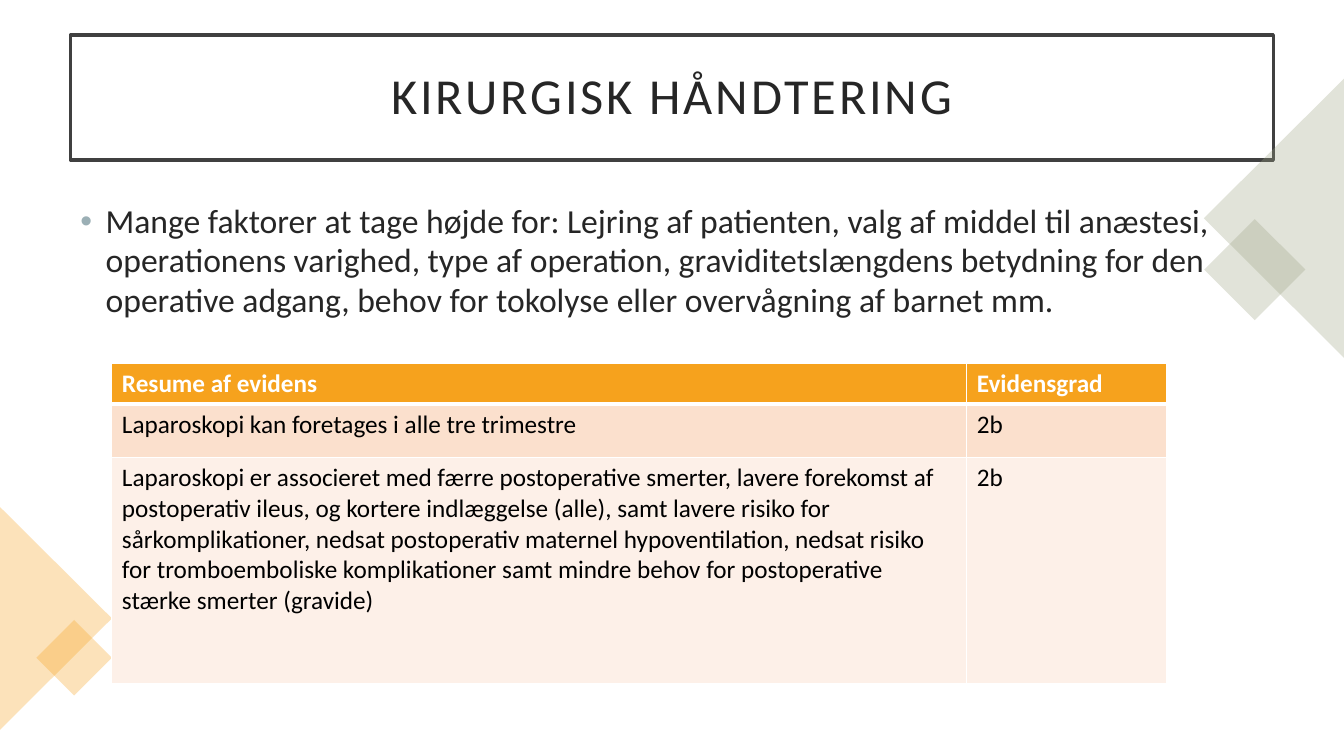
from lxml.etree import SubElement
from pptx import Presentation
from pptx.dml.color import RGBColor
from pptx.enum.shapes import MSO_SHAPE as Shape
from pptx.enum.text import MSO_ANCHOR as Anchor, PP_ALIGN as Align
from pptx.oxml import parse_xml
from pptx.oxml.ns import nsdecls, qn
from pptx.util import Inches, Pt

COLORS = {
    "white": "FFFFFF", "backdrop": "F2F2F2", "frame": "404040", "ink": "262626",
    "black": "000000", "bullet": "9BAFB5", "sage": "9CA383", "orange": "F6A21D",
    "peach": "FBE0CD", "cream": "FDF0E8",
}
WIDTH, HEIGHT = 13.33, 7.5
MARGIN = 0.7
CONTENT = WIDTH - 2 * MARGIN


def add_block(kind, left, top, width, height, color, turn=0, alpha=None):
    block = page.shapes.add_shape(kind, Inches(left), Inches(top), Inches(width), Inches(height))
    block.shadow.inherit = False
    block.rotation = turn
    block.fill.solid()
    block.fill.fore_color.rgb = RGBColor.from_string(COLORS[color])
    block.line.fill.background()
    if alpha:
        tint = block.fill._xPr.find(qn("a:solidFill"))[0]
        SubElement(tint, qn("a:alpha")).set("val", str(alpha * 1000))
    return block


def style_font(font, size, color, bold=False):
    font.name = "Calibri"
    font.size = Pt(size)
    font.bold = bold
    font.color.rgb = RGBColor.from_string(COLORS[color])


deck = Presentation()
deck.slide_width, deck.slide_height = Inches(WIDTH), Inches(HEIGHT)
page = deck.slides.add_slide(deck.slide_layouts[6])
page.background.fill.solid()
page.background.fill.fore_color.rgb = RGBColor.from_string(COLORS["backdrop"])
add_block(Shape.RECTANGLE, 0, 0, WIDTH, HEIGHT, "white")

title = add_block(Shape.RECTANGLE, MARGIN, 0.35, CONTENT, 1.24, "white")
title.line.color.rgb = RGBColor.from_string(COLORS["frame"])
title.line.width = Pt(2.5)
frame = title.text_frame
frame.word_wrap = True
frame.vertical_anchor = Anchor.MIDDLE
frame.margin_left = frame.margin_right = frame.margin_top = frame.margin_bottom = Inches(0.2)
frame.text = "KIRURGISK HÅNDTERING"
para = frame.paragraphs[0]
para.alignment = Align.CENTER
para.line_spacing = 0.9
span = para.runs[0]
style_font(span.font, 36, "ink")
span.font._element.set("spc", "200")

body = page.shapes.add_textbox(Inches(MARGIN), Inches(1.95), Inches(CONTENT), Inches(4.81))
body.text_frame.word_wrap = True
body.text_frame.text = (
    "Mange faktorer at tage højde for: Lejring af patienten, valg af middel til anæstesi, "
    "operationens varighed, type af operation, graviditetslængdens betydning for den "
    "operative adgang, behov for tokolyse eller overvågning af barnet mm."
)
para = body.text_frame.paragraphs[0]
para.line_spacing = 0.98
layout = para._p.get_or_add_pPr()
layout.set("marL", str(Inches(0.25)))
layout.set("indent", str(-Inches(0.25)))
bullet_color = SubElement(layout, qn("a:buClr"))
SubElement(bullet_color, qn("a:srgbClr")).set("val", COLORS["bullet"])
SubElement(layout, qn("a:buFont")).set("typeface", "Arial")
SubElement(layout, qn("a:buChar")).set("char", "•")
style_font(para.runs[0].font, 24, "ink")

ORNAMENTS = [
    (Shape.RECTANGLE, 12.09, 2.32, 0.71, 0.71, "sage", 45),
    (Shape.ISOSCELES_TRIANGLE, 11.25, 1.47, 2.77, 1.39, "sage", 270),
    (Shape.ISOSCELES_TRIANGLE, -0.55, 5.58, 2.21, 1.11, "orange", 90),
    (Shape.RECTANGLE, 0.47, 6.26, 0.53, 0.53, "orange", 45),
]
for ornament in ORNAMENTS:
    add_block(*ornament, alpha=30)

COLUMNS = [8.48, 1.98]
ROWS = [
    (0.39, "orange", "Resume af evidens", "Evidensgrad"),
    (0.53, "peach", "Laparoskopi kan foretages i alle tre trimestre", "2b"),
    (2.24, "cream",
     "Laparoskopi er associeret med færre postoperative smerter, lavere forekomst af "
     "postoperativ ileus, og kortere indlæggelse (alle), samt lavere risiko for "
     "sårkomplikationer, nedsat postoperativ maternel hypoventilation, nedsat risiko "
     "for tromboemboliske komplikationer samt mindre behov for postoperative "
     "stærke smerter (gravide)", "2b"),
]
table = page.shapes.add_table(
    len(ROWS), len(COLUMNS), Inches(1.11), Inches(3.61),
    Inches(sum(COLUMNS)), Inches(sum(row[0] for row in ROWS)),
).table
for column, width in zip(table.columns, COLUMNS):
    column.width = Inches(width)
for r, (height, color, *texts) in enumerate(ROWS):
    table.rows[r].height = Inches(height)
    for c, text in enumerate(texts):
        cell = table.cell(r, c)
        cell.text = text
        header = r == 0
        style_font(cell.text_frame.paragraphs[0].runs[0].font, 18,
                   "white" if header else "black", header)
        cell.fill.solid()
        cell.fill.fore_color.rgb = RGBColor.from_string(COLORS[color])
        for spot, side in enumerate("LRTB"):
            heavy = (r, side) in [(0, "B"), (1, "T")]
            border = parse_xml(
                f'<a:ln{side} {nsdecls("a")} w="{Pt(3 if heavy else 1)}"><a:solidFill>'
                f'<a:srgbClr val="{COLORS["white"]}"/></a:solidFill></a:ln{side}>')
            cell._tc.get_or_add_tcPr().insert(spot, border)

deck.save("out.pptx")
